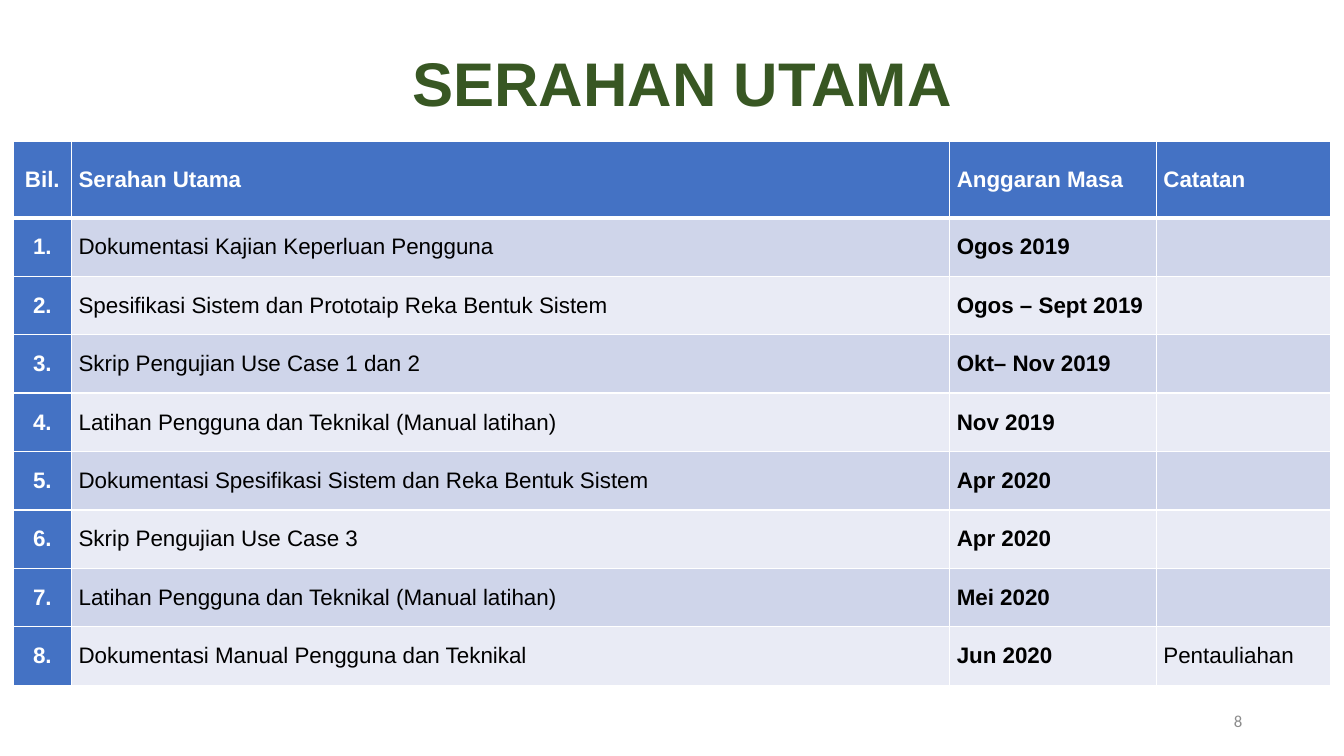
from lxml.etree import SubElement
from pptx import Presentation
from pptx.dml.color import RGBColor
from pptx.enum.text import MSO_ANCHOR, MSO_AUTO_SIZE, PP_ALIGN
from pptx.oxml.ns import qn
from pptx.util import Inches, Pt

WHITE = RGBColor(0xFF, 0xFF, 0xFF)
BLACK = RGBColor(0x00, 0x00, 0x00)
GREEN = RGBColor(0x38, 0x57, 0x23)
BLUE = RGBColor(0x44, 0x72, 0xC4)
BAND_DARK = RGBColor(0xCF, 0xD5, 0xEA)
BAND_LIGHT = RGBColor(0xE9, 0xEB, 0xF5)
GREY = RGBColor(0x8C, 0x8C, 0x8C)

HEADINGS = ("Bil.", "Serahan Utama", "Anggaran Masa", "Catatan")
DELIVERABLES = (
    ("Dokumentasi Kajian Keperluan Pengguna", "Ogos 2019", ""),
    ("Spesifikasi Sistem dan Prototaip Reka Bentuk Sistem", "Ogos – Sept 2019", ""),
    ("Skrip Pengujian Use Case 1 dan 2", "Okt– Nov 2019", ""),
    ("Latihan Pengguna dan Teknikal (Manual latihan)", "Nov 2019", ""),
    ("Dokumentasi Spesifikasi Sistem dan Reka Bentuk Sistem", "Apr 2020", ""),
    ("Skrip Pengujian Use Case 3", "Apr 2020", ""),
    ("Latihan Pengguna dan Teknikal (Manual latihan)", "Mei 2020", ""),
    ("Dokumentasi Manual Pengguna dan Teknikal", "Jun 2020", "Pentauliahan"),
)
COLUMN_WIDTHS = (0.58, 8.71, 2.05, 1.73)
HEADER_HEIGHT, ROW_HEIGHT = 0.76, 0.58


class DeliverablesSlide:
    TITLE = {"name": "Arial", "size": Pt(44), "bold": True}
    HEADING = {"name": "Arial", "size": Pt(16), "bold": True}
    BODY = {"name": "Arial", "size": Pt(16), "bold": False}
    NUMBER = {"name": "Calibri", "size": Pt(12), "bold": False}

    def __init__(self, deck):
        self.slide = deck.slides.add_slide(deck.slide_layouts[5])

    def set_text(self, frame, text, style, color, align=PP_ALIGN.LEFT):
        paragraph = frame.paragraphs[0]
        paragraph.text = text
        paragraph.alignment = align
        for attribute, value in style.items():
            setattr(paragraph.font, attribute, value)
        paragraph.font.color.rgb = color

    def title(self, text, left, top, width, height):
        heading = self.slide.shapes.title
        place = {"left": left, "top": top, "width": width, "height": height}
        for attribute, value in place.items():
            setattr(heading, attribute, Inches(value))
        layout = {"word_wrap": False, "auto_size": MSO_AUTO_SIZE.NONE,
                  "vertical_anchor": MSO_ANCHOR.BOTTOM, "margin_bottom": Inches(0.02)}
        for attribute, value in layout.items():
            setattr(heading.text_frame, attribute, value)
        self.set_text(heading.text_frame, text, self.TITLE, GREEN)

    def borders(self, cell, top, bottom):
        properties = cell._tc.get_or_add_tcPr()
        for side, points in (("L", 1), ("R", 1), ("T", top), ("B", bottom)):
            line = SubElement(properties, qn(f"a:ln{side}"), w=str(Pt(points)))
            fill = SubElement(line, qn("a:solidFill"))
            SubElement(fill, qn("a:srgbClr"), val=str(WHITE))

    def cell(self, cell, text, row, column):
        is_header = row == 0
        on_blue = is_header or column == 0
        layout = {"vertical_anchor": MSO_ANCHOR.MIDDLE,
                  "margin_left": Inches(0.07), "margin_right": Inches(0.07),
                  "margin_top": 0, "margin_bottom": 0}
        for attribute, value in layout.items():
            setattr(cell, attribute, value)
        self.borders(cell, 3 if row == 1 else 1, 3 if is_header else 1)
        cell.fill.solid()
        band = BAND_DARK if row % 2 else BAND_LIGHT
        cell.fill.fore_color.rgb = BLUE if on_blue else band
        self.set_text(cell.text_frame, text,
                      self.HEADING if on_blue or column == 2 else self.BODY,
                      WHITE if on_blue else BLACK,
                      PP_ALIGN.CENTER if column == 0 else PP_ALIGN.LEFT)

    def table(self, rows, left, top):
        height = HEADER_HEIGHT + ROW_HEIGHT * (len(rows) - 1)
        table = self.slide.shapes.add_table(
            len(rows), len(COLUMN_WIDTHS), Inches(left), Inches(top),
            Inches(sum(COLUMN_WIDTHS)), Inches(height)).table
        table.first_col = True
        for column, width in zip(table.columns, COLUMN_WIDTHS):
            column.width = Inches(width)
        for r, texts in enumerate(rows):
            table.rows[r].height = Inches(ROW_HEIGHT if r else HEADER_HEIGHT)
            for c, text in enumerate(texts):
                self.cell(table.cell(r, c), text, r, c)

    def page_number(self, text, left, top, width, height):
        frame = self.slide.shapes.add_textbox(
            Inches(left), Inches(top), Inches(width), Inches(height)).text_frame
        frame.word_wrap = True
        frame.vertical_anchor = MSO_ANCHOR.MIDDLE
        self.set_text(frame, text, self.NUMBER, GREY, PP_ALIGN.RIGHT)


def main():
    deck = Presentation()
    deck.slide_width, deck.slide_height = Inches(13.33), Inches(7.5)
    page = DeliverablesSlide(deck)

    # Title
    page.title("SERAHAN UTAMA", 3.99, 0.36, 5.6, 0.84)

    # Numbered deliverables
    numbered = [(f"{n}.", *item) for n, item in enumerate(DELIVERABLES, 1)]
    page.table([HEADINGS, *numbered], 0.13, 1.4)

    # Page number
    page.page_number("8", 9.42, 6.95, 3, 0.4)

    deck.save("out.pptx")


if __name__ == "__main__":
    main()
